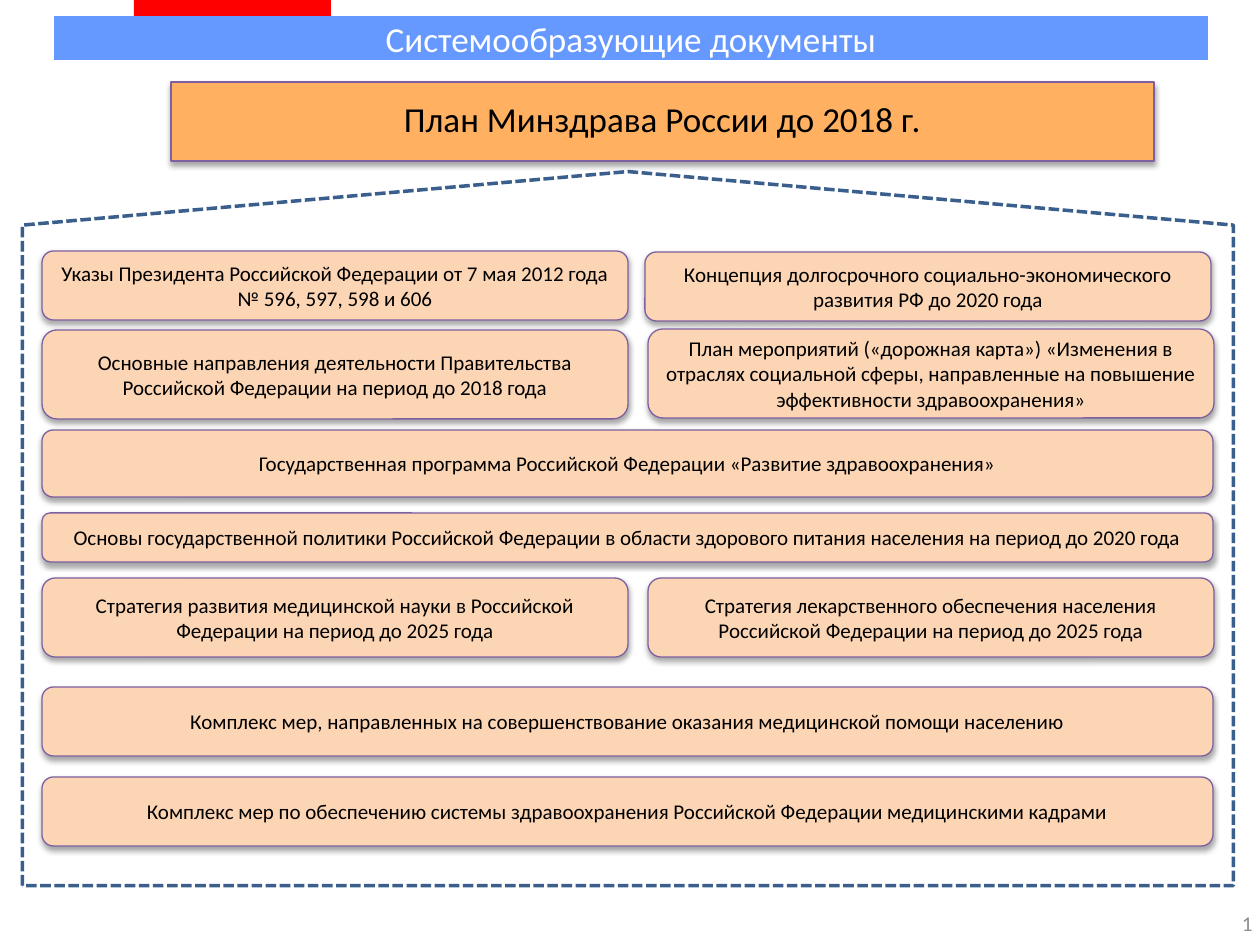
from lxml.etree import SubElement
from pptx import Presentation
from pptx.dml.color import RGBColor
from pptx.enum.dml import MSO_LINE_DASH_STYLE as Dash
from pptx.enum.shapes import MSO_SHAPE as Shape
from pptx.enum.text import MSO_ANCHOR as Anchor, MSO_AUTO_SIZE as AutoSize, PP_ALIGN as Align
from pptx.oxml.ns import qn
from pptx.util import Emu, Pt

COLORS = {
    "banner": "6699FF",
    "accent": "FF0000",
    "plan": "FFB061",
    "card": "FCD5B5",
    "border": "7D60A0",
    "frame": "3A5F8C",
    "text": "000000",
    "light": "FFFFFF",
    "number": "8C8C8C",
}
FULL = 1171
LEFT_WIDTH = 586
RIGHT_WIDTH = 566
CARDS = [
    (42, 251, LEFT_WIDTH, 69, "Указы Президента Российской Федерации от 7 мая 2012 года № 596, 597, 598 и 606"),
    (645, 252, RIGHT_WIDTH, 69, "Концепция долгосрочного социально-экономического развития РФ до 2020 года"),
    (42, 330, LEFT_WIDTH, 89, "Основные направления деятельности Правительства Российской Федерации на период до 2018 года"),
    (648, 329, RIGHT_WIDTH, 89, "План мероприятий («дорожная карта») «Изменения в отраслях социальной сферы, направленные на повышение эффективности здравоохранения»"),
    (42, 430, FULL, 67, "Государственная программа Российской Федерации «Развитие здравоохранения»"),
    (42, 513, FULL, 49, "Основы государственной политики Российской Федерации в области здорового питания населения на период до 2020 года"),
    (42, 578, LEFT_WIDTH, 79, "Стратегия развития медицинской науки в Российской Федерации на период до 2025 года"),
    (648, 578, RIGHT_WIDTH, 79, "Стратегия лекарственного обеспечения населения Российской Федерации на период до 2025 года"),
    (42, 687, FULL, 69, "Комплекс мер, направленных на совершенствование оказания медицинской помощи населению"),
    (42, 777, FULL, 69, "Комплекс мер по обеспечению системы здравоохранения Российской Федерации медицинскими кадрами"),
]


def px(*lengths):
    return [Emu(round(length * 914400 / 126)) for length in lengths]


def write(shape, text, size, color, align=Align.CENTER):
    frame = shape.text_frame
    frame.text = text
    frame.word_wrap = True
    frame.auto_size = AutoSize.NONE
    frame.vertical_anchor = Anchor.MIDDLE
    paragraph = frame.paragraphs[0]
    paragraph.alignment = align
    paragraph.font.name = "Calibri"
    paragraph.font.size = Pt(size)
    paragraph.font.color.rgb = RGBColor.from_string(COLORS[color])


presentation = Presentation()
presentation.slide_width, presentation.slide_height = px(1260, 945)
slide = presentation.slides.add_slide(presentation.slide_layouts[5])
shapes = slide.shapes

title = shapes.title
title.left, title.top, title.width, title.height = px(54, 16, 1154, 44)
title.fill.solid()
title.fill.fore_color.rgb = RGBColor.from_string(COLORS["banner"])
write(title, "Системообразующие документы", 20, "light")

accent = shapes.add_shape(Shape.RECTANGLE, *px(134, 0, 197, 16))
accent.shadow.inherit = False
accent.fill.solid()
accent.fill.fore_color.rgb = RGBColor.from_string(COLORS["accent"])
accent.line.fill.background()

frame = shapes.add_shape(Shape.PENTAGON, *px(271, -77, 714, 1211))
frame.rotation = 270
frame.adjustments[0] = 0.075
frame.shadow.inherit = False
frame.fill.background()
frame.line.color.rgb = RGBColor.from_string(COLORS["frame"])
frame.line.width = Pt(2)
frame.line.dash_style = Dash.SQUARE_DOT

plan = shapes.add_shape(Shape.RECTANGLE, *px(171, 82, 983, 79))
write(plan, "План Минздрава России до 2018 г.", 20, "text")
plan.text_frame.margin_top = 0
boxes = [(plan, "plan")]

for left, top, width, height, text in CARDS:
    card = shapes.add_shape(Shape.ROUNDED_RECTANGLE, *px(left, top, width, height))
    write(card, text, 12, "text")
    boxes.append((card, "card"))

for box, color in boxes:
    box.fill.solid()
    box.fill.fore_color.rgb = RGBColor.from_string(COLORS[color])
    box.line.color.rgb = RGBColor.from_string(COLORS["border"])
    box.line.width = Pt(0.75)
    box.shadow.inherit = False
    effects = box.element.spPr.find(qn("a:effectLst"))
    shadow = SubElement(effects, qn("a:outerShdw"), blurRad="40000", dist="23000", dir="5400000", rotWithShape="0")
    shadow_color = SubElement(shadow, qn("a:srgbClr"), val=COLORS["text"])
    SubElement(shadow_color, qn("a:alpha"), val="35000")

number = shapes.add_textbox(*px(971, 898, 294, 50))
write(number, "1", 12, "number", Align.RIGHT)

presentation.save("out.pptx")
